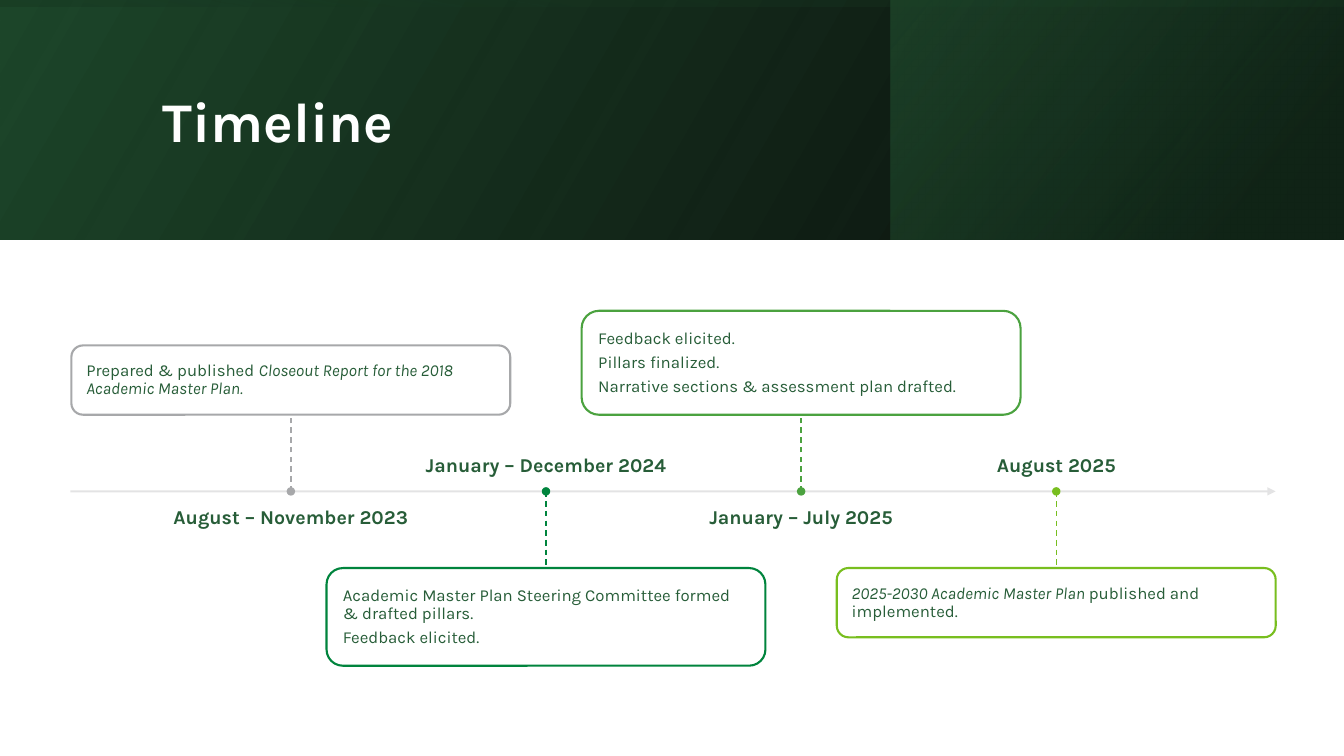
from lxml.etree import SubElement
from pptx import Presentation
from pptx.dml.color import RGBColor
from pptx.enum.dml import MSO_LINE
from pptx.enum.shapes import MSO_CONNECTOR, MSO_SHAPE
from pptx.enum.text import MSO_ANCHOR, PP_ALIGN
from pptx.oxml.ns import qn
from pptx.util import Pt

PX = 9525
WHITE = RGBColor(0xFF, 0xFF, 0xFF)
BLACK = RGBColor(0x00, 0x00, 0x00)
FOREST = RGBColor(0x1D, 0x46, 0x2A)
PINE = RGBColor(0x13, 0x2E, 0x1C)
TEXT_GREEN = RGBColor(0x27, 0x5D, 0x38)
AXIS_GRAY = RGBColor(0xE1, 0xE1, 0xE2)
GRAY = RGBColor(0xA7, 0xA8, 0xAA)
EMERALD = RGBColor(0x00, 0x84, 0x3D)
LEAF = RGBColor(0x4B, 0xA2, 0x3F)
LIME = RGBColor(0x78, 0xBE, 0x1F)

AXIS_Y = 468
FIRST_X, STEP_X = 277, 243
CARD_WIDTH = 418
DATE_WIDTH, DATE_HEIGHT = 368, 44

MILESTONES = [
    ("August – November 2023", GRAY, 66, [
        [("Prepared & published ", False),
         ("Closeout Report for the 2018 Academic Master Plan.", True)]]),
    ("January – December 2024", EMERALD, 93, [
        [("Academic Master Plan Steering Committee formed & drafted pillars.", False)],
        [("Feedback elicited.", False)]]),
    ("January – July 2025", LEAF, 99, [
        [("Feedback elicited.", False)],
        [("Pillars finalized.", False)],
        [("Narrative sections & assessment plan drafted.", False)]]),
    ("August 2025", LIME, 66, [
        [("2025-2030 Academic Master Plan ", True),
         ("published and implemented.", False)]]),
]


class TimelineSlide:
    font_name = "Karla"

    def __init__(self, page):
        self.page = page

    def set_alpha(self, element, percents):
        for color, percent in zip(element.iter(qn("a:srgbClr")), percents):
            SubElement(color, qn("a:alpha"), val=str(percent * 1000))

    def shape(self, kind, left, top, width, height):
        shape = self.page.shapes.add_shape(
            kind, left * PX, top * PX, width * PX, height * PX)
        shape.shadow.inherit = False
        return shape

    def gradient(self, left, width, height, angle, stops):
        panel = self.shape(MSO_SHAPE.RECTANGLE, left, 0, width, height)
        panel.fill.gradient()
        panel.fill.gradient_angle = angle
        for stop, (position, color, _) in zip(panel.fill.gradient_stops, stops):
            stop.position = position
            stop.color.rgb = color
        self.set_alpha(panel.element.spPr, [alpha for _, _, alpha in stops])
        panel.line.fill.background()

    def add_paragraphs(self, box, paragraphs, size, color, bold=False,
                       align=PP_ALIGN.LEFT, anchor=MSO_ANCHOR.MIDDLE,
                       inset=(0, 0), after=0.35):
        frame = box.text_frame
        frame.word_wrap = True
        frame.vertical_anchor = anchor
        frame.margin_left = frame.margin_right = inset[0] * PX
        frame.margin_top = frame.margin_bottom = inset[1] * PX
        for index, spans in enumerate(paragraphs):
            para = frame.add_paragraph() if index else frame.paragraphs[0]
            para.alignment = align
            para.line_spacing = 0.9
            para.space_after = Pt(size * after)
            para.font.name = self.font_name
            para.font.size = Pt(size)
            para.font.bold = bold
            para.font.color.rgb = color
            for text, italic in spans:
                span = para.add_run()
                span.text = text
                if italic:
                    span.font.italic = True

    def text(self, left, top, width, height, words, size, color, **style):
        box = self.page.shapes.add_textbox(left * PX, top * PX, width * PX, height * PX)
        self.add_paragraphs(box, [[(words, False)]], size, color, bold=True, **style)

    def card(self, left, top, height, color, paragraphs):
        card = self.shape(MSO_SHAPE.ROUNDED_RECTANGLE, left, top, CARD_WIDTH, height)
        card.fill.solid()
        card.fill.fore_color.rgb = WHITE
        self.set_alpha(card.element.spPr, [90])
        card.line.color.rgb = color
        card.line.width = Pt(1.5)
        self.add_paragraphs(card, paragraphs, 12, TEXT_GREEN, inset=(11, 11))
        return card

    def line(self, start, end, color, width):
        connector = self.page.shapes.add_connector(
            MSO_CONNECTOR.STRAIGHT, *(length * PX for length in start + end))
        connector.line.color.rgb = color
        connector.line.width = Pt(width)
        SubElement(connector.element.spPr, qn("a:effectLst"))
        return connector

    def axis(self, left, right):
        properties = self.line((left, AXIS_Y), (right, AXIS_Y), AXIS_GRAY, 1.5).element.spPr
        self.set_alpha(properties, [90])
        SubElement(properties.find(qn("a:ln")), qn("a:tailEnd"), type="triangle")

    def dot(self, center_x, color):
        dot = self.shape(MSO_SHAPE.OVAL, center_x - 3, AXIS_Y - 3, 6, 6)
        dot.fill.solid()
        dot.fill.fore_color.rgb = color
        dot.line.color.rgb = color
        dot.line.width = Pt(1.5)

    def milestone(self, center_x, above, date, color, height, paragraphs):
        card_top = 395 - height if above else 541
        card = self.card(center_x - CARD_WIDTH // 2, card_top, height, color, paragraphs)
        stem_end = 395 if above else 541
        stem = self.line((center_x, AXIS_Y), (center_x, stem_end), color, 1)
        stem.line.dash_style = MSO_LINE.DASH
        stem.end_connect(card, 2 if above else 0)
        date_top = AXIS_Y + 15 if above else AXIS_Y - 14 - DATE_HEIGHT
        self.text(center_x - DATE_WIDTH // 2, date_top, DATE_WIDTH, DATE_HEIGHT,
                  date, 14, TEXT_GREEN, align=PP_ALIGN.CENTER,
                  anchor=MSO_ANCHOR.TOP if above else MSO_ANCHOR.BOTTOM)
        self.dot(center_x, color)


def main():
    deck = Presentation()
    deck.slide_width = 1280 * PX
    deck.slide_height = 720 * PX
    slide = TimelineSlide(deck.slides.add_slide(deck.slide_layouts[6]))

    slide.gradient(0, 1280, 228, 150, [(0, BLACK, 96), (1, FOREST, 100)])
    slide.gradient(848, 431, 228, 140, [(0.19, PINE, 68), (1, TEXT_GREEN, 48)])
    slide.gradient(0, 1280, 228, 260, [(0.23, FOREST, 16), (0.99, BLACK, 45)])
    slide.text(145, 36, 1020, 165, "Timeline", 40, WHITE, inset=(10, 5), after=0.15)

    slide.axis(67, 1215)
    for index, milestone in enumerate(MILESTONES):
        slide.milestone(FIRST_X + STEP_X * index, index % 2 == 0, *milestone)
    deck.save("out.pptx")


if __name__ == "__main__":
    main()
